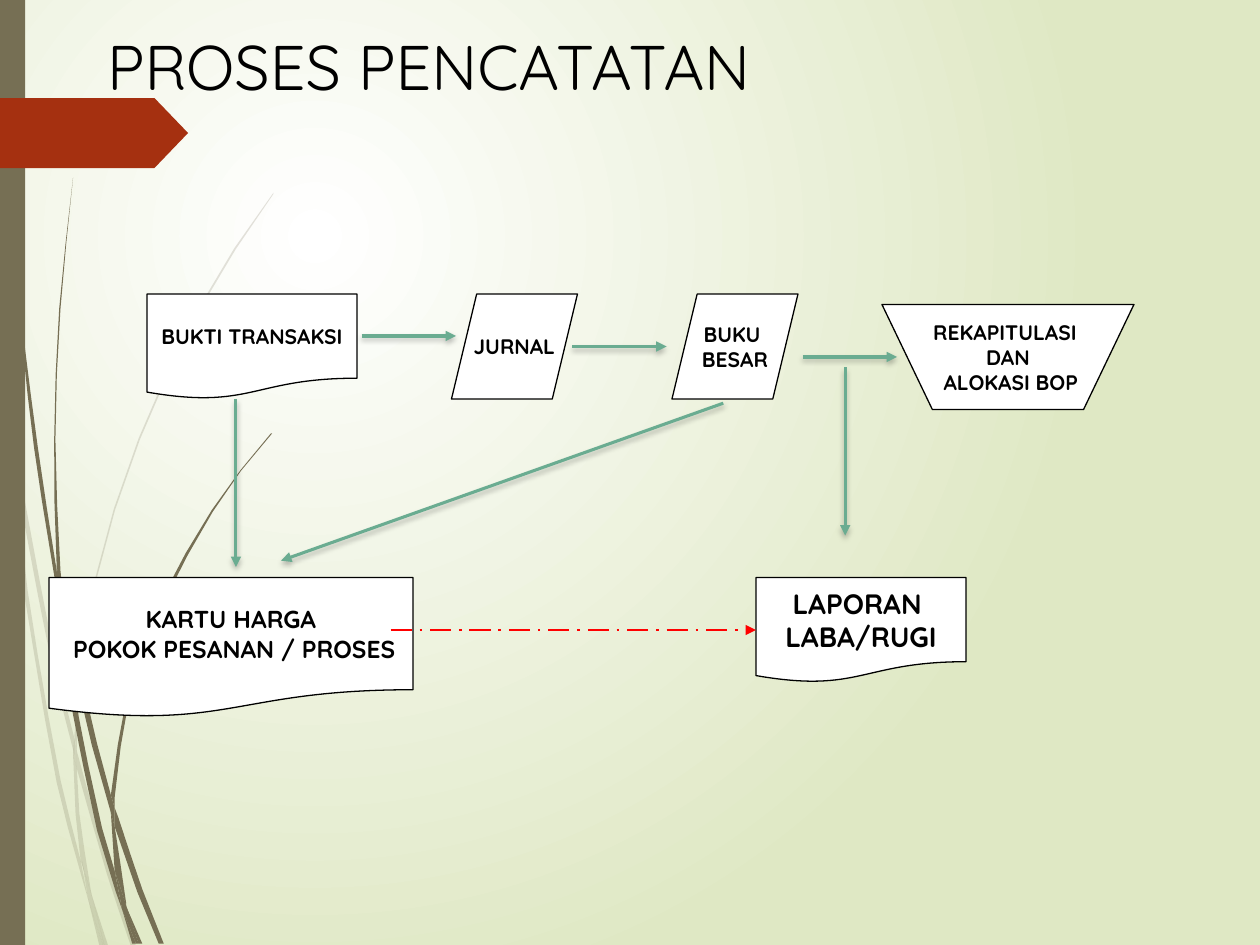
"""Build the recording-process flowchart slide."""
from math import hypot

from lxml.etree import SubElement
from pptx import Presentation
from pptx.dml.color import RGBColor
from pptx.enum.dml import MSO_LINE
from pptx.enum.shapes import MSO_CONNECTOR, MSO_SHAPE
from pptx.enum.text import MSO_ANCHOR, MSO_AUTO_SIZE, PP_ALIGN
from pptx.oxml.ns import qn
from pptx.util import Pt

FONT = "Quicksand"
BLACK = RGBColor(0x00, 0x00, 0x00)
WHITE = RGBColor(0xFF, 0xFF, 0xFF)
PALE_GREEN = RGBColor(0xDF, 0xE8, 0xC4)
OLIVE = RGBColor(0x76, 0x6F, 0x54)
RUST = RGBColor(0xA5, 0x30, 0x10)
TEAL = RGBColor(0x6A, 0xAC, 0x91)
RED = RGBColor(0xFF, 0x00, 0x00)

TITLE = "PROSES PENCATATAN"
DOCUMENT = MSO_SHAPE.FLOWCHART_DOCUMENT
DATA = MSO_SHAPE.FLOWCHART_DATA
MANUAL = MSO_SHAPE.FLOWCHART_MANUAL_OPERATION
STEPS = {
    "bukti": (DOCUMENT, (84, 168, 120, 60), 12, ["BUKTI TRANSAKSI"]),
    "kartu": (DOCUMENT, (28, 330, 208, 80), 14, ["KARTU HARGA", " POKOK PESANAN / PROSES"]),
    "laporan": (DOCUMENT, (432, 330, 120, 60), 16, ["LAPORAN ", "LABA/RUGI"]),
    "jurnal": (DATA, (258, 168, 72, 60), 12, ["JURNAL"]),
    "buku": (DATA, (384, 168, 72, 60), 12, ["BUKU ", "BESAR"]),
    "rekap": (MANUAL, (504, 174, 144, 60), 12, ["REKAPITULASI ", "DAN", " ALOKASI BOP"]),
}
FLOWS = [
    (134.8, 228, 134.8, 324),
    (206.6, 192, 260.6, 192),
    (326.9, 198, 380.9, 198),
    (458.6, 204, 512.6, 204),
    (483, 210, 483, 306),
    (413.3, 230.4, 160.6, 320.4),
]
REPORT_FLOW = (223.2, 360, 432, 360)

WISP_UNIT = 0.72
PALE_WISPS = [
    ([(8, 350), (6, 322), (0, 282)], [(0, 299), (7, 344)]),
    ([(10, 345), (43, 520), (59, 586)], [(59, 599), (40, 522), (12, 376)]),
    ([(61, 596), (64, 607), (88, 692), (108, 751)], [(104, 751), (85, 694), (61, 610)]),
    ([(73, 711), (86, 751)], [(83, 751)]),
    ([(8, 350), (12, 376), (22, 469), (48, 619), (64, 683), (70, 714)],
     [(64, 693), (45, 621), (19, 470)]),
    ([(58, 599), (60, 646), (64, 683), (73, 711)], [(72, 706), (63, 646), (61, 610)]),
    ([(59, 584), (75, 461), (110, 348), (158, 244), (186, 197), (217, 153)],
     [(217, 154), (187, 198), (159, 245), (111, 349), (76, 462), (61, 584), (61, 596)]),
    ([(70, 714), (79, 751)], [(82, 751)]),
    ([(59, 586), (61, 596), (61, 610)], [(58, 599)]),
    ([(65, 683), (70, 714), (82, 751)], [(83, 751), (73, 711), (67, 692)]),
]
DARK_WISPS = [
    ([(2, 0), (5, 110), (14, 233), (27, 355), (47, 481)],
     [(45, 453), (30, 355), (15, 232), (6, 109), (3, 0)]),
    ([(50, 472), (77, 590), (88, 631)], [(88, 645), (73, 592), (53, 505)]),
    ([(91, 641), (94, 649), (113, 706), (130, 749)], [(126, 749), (109, 708), (91, 656)]),
    ([(47, 477), (53, 505), (60, 556), (81, 657), (91, 691), (97, 722)],
     [(92, 708), (77, 659), (56, 557)]),
    ([(50, 472), (48, 453), (44, 349), (48, 245), (58, 141)],
     [(58, 141), (47, 245), (43, 349), (45, 449), (49, 472)]),
    ([(100, 719), (113, 749)], [(110, 749)]),
    ([(45, 449), (50, 472), (53, 505)], [(47, 477), (45, 453)]),
    ([(88, 631), (101, 551), (129, 474), (168, 405), (191, 373), (215, 344)],
     [(216, 344), (191, 374), (169, 406), (131, 476), (103, 552), (91, 633), (91, 641)]),
    ([(97, 722), (105, 749)], [(108, 749)]),
    ([(88, 645), (91, 656), (100, 716)], [(100, 719), (96, 706), (91, 691)]),
    ([(88, 631), (91, 641), (91, 656)], [(88, 645)]),
    ([(91, 691), (96, 706), (110, 749)], [(108, 749), (97, 722)]),
]


def smooth(edge):
    last = len(edge) - 1
    tangents = []
    for i in range(last + 1):
        (x0, y0), (x1, y1) = edge[max(i - 1, 0)], edge[min(i + 1, last)]
        length = hypot(x1 - x0, y1 - y0) or 1
        tangents.append(((x1 - x0) / length, (y1 - y0) / length))
    curve = [edge[0]]
    for i in range(last):
        start, end = edge[i], edge[i + 1]
        chord = hypot(end[0] - start[0], end[1] - start[1])
        parts = 1 + int(chord // 60)
        for t in (n / parts for n in range(1, parts + 1)):
            rise = t * t * (3 - 2 * t)
            leave, arrive = t * (1 - t) ** 2 * chord, t * t * (t - 1) * chord
            curve.append(tuple(
                a + (b - a) * rise + leave * u + arrive * v
                for a, b, u, v in zip(start, end, tangents[i], tangents[i + 1])))
    return curve


def fill_plain(shape, color):
    shape.fill.solid()
    shape.fill.fore_color.rgb = color
    shape.line.fill.background()
    shape.shadow.inherit = False


def add_wisp(slide, edges, alpha=None):
    outline = [(Pt(x * WISP_UNIT), Pt(y * WISP_UNIT)) for edge in edges for x, y in smooth(edge)]
    builder = slide.shapes.build_freeform(*outline[0])
    builder.add_line_segments(outline[1:], close=True)
    wisp = builder.convert_to_shape()
    fill_plain(wisp, OLIVE)
    if alpha:
        color = wisp.element.spPr.find(qn("a:solidFill")).find(qn("a:srgbClr"))
        SubElement(color, qn("a:alpha"), val=str(alpha * 1000))


def add_background(slide):
    fill = slide.background.fill
    fill.gradient()
    for stop, color in zip(fill.gradient_stops, (WHITE, PALE_GREEN)):
        stop.color.rgb = color
    linear = next(slide.element.iter(qn("a:lin")))
    gradient = linear.getparent()
    gradient.remove(linear)
    circle = SubElement(gradient, qn("a:path"), {"path": "circle"})
    SubElement(circle, qn("a:fillToRect"), l="50000", t="50000", r="100000", b="100000")
    for edges in PALE_WISPS:
        add_wisp(slide, edges, alpha=20)
    for edges in DARK_WISPS:
        add_wisp(slide, edges)
    bar = slide.shapes.add_shape(MSO_SHAPE.RECTANGLE, 0, 0, Pt(14.4), Pt(540))
    fill_plain(bar, OLIVE)
    tab = slide.shapes.add_shape(MSO_SHAPE.PENTAGON, 0, Pt(56), Pt(107.5), Pt(40))
    tab.adjustments[0] = 0.48
    fill_plain(tab, RUST)


def add_text(paragraph, text, size, align, bold=False):
    paragraph.alignment = align
    run = paragraph.add_run()
    run.text = text
    run.font.name, run.font.size, run.font.bold = FONT, Pt(size), bold
    run.font.color.rgb = BLACK


def add_title(slide):
    title = slide.shapes.title
    title.left, title.top, title.width, title.height = Pt(54), Pt(12), Pt(541), Pt(96)
    title.text_frame.vertical_anchor = MSO_ANCHOR.TOP
    title.text_frame.auto_size = MSO_AUTO_SIZE.NONE
    add_text(title.text_frame.paragraphs[0], TITLE, 36, PP_ALIGN.LEFT)


def add_step(slide, kind, box, size, lines):
    step = slide.shapes.add_shape(kind, *map(Pt, box))
    fill_plain(step, WHITE)
    step.line.color.rgb, step.line.width = BLACK, Pt(0.75)
    frame = step.text_frame
    frame.word_wrap, frame.vertical_anchor = False, MSO_ANCHOR.MIDDLE
    for i, line in enumerate(lines):
        paragraph = frame.add_paragraph() if i else frame.paragraphs[0]
        add_text(paragraph, line, size, PP_ALIGN.CENTER, bold=True)
    return step


def add_flow(slide, ends, color, width, dash=None, shadow=False):
    flow = slide.shapes.add_connector(MSO_CONNECTOR.STRAIGHT, *map(Pt, ends))
    flow.line.color.rgb, flow.line.width = color, Pt(width)
    if dash:
        flow.line.dash_style = dash
    SubElement(flow.element.spPr.find(qn("a:ln")), qn("a:tailEnd"), type="triangle")
    effects = SubElement(flow.element.spPr, qn("a:effectLst"))
    if shadow:
        outer = SubElement(effects, qn("a:outerShdw"), blurRad=str(int(Pt(3))),
                           dist=str(int(Pt(2))), dir="5400000", rotWithShape="0")
        SubElement(SubElement(outer, qn("a:srgbClr"), val=str(BLACK)), qn("a:alpha"), val="25000")
    return flow


def main():
    deck = Presentation()
    deck.slide_width, deck.slide_height = Pt(720), Pt(540)
    slide = deck.slides.add_slide(deck.slide_layouts[5])
    add_background(slide)
    add_title(slide)
    steps = {name: add_step(slide, *step) for name, step in STEPS.items()}
    for ends in FLOWS:
        add_flow(slide, ends, TEAL, 1.75, shadow=True)
    report_flow = add_flow(slide, REPORT_FLOW, RED, 1.5, dash=MSO_LINE.LONG_DASH_DOT)
    report_flow.end_connect(steps["laporan"], 1)
    deck.save("out.pptx")


if __name__ == "__main__":
    main()
